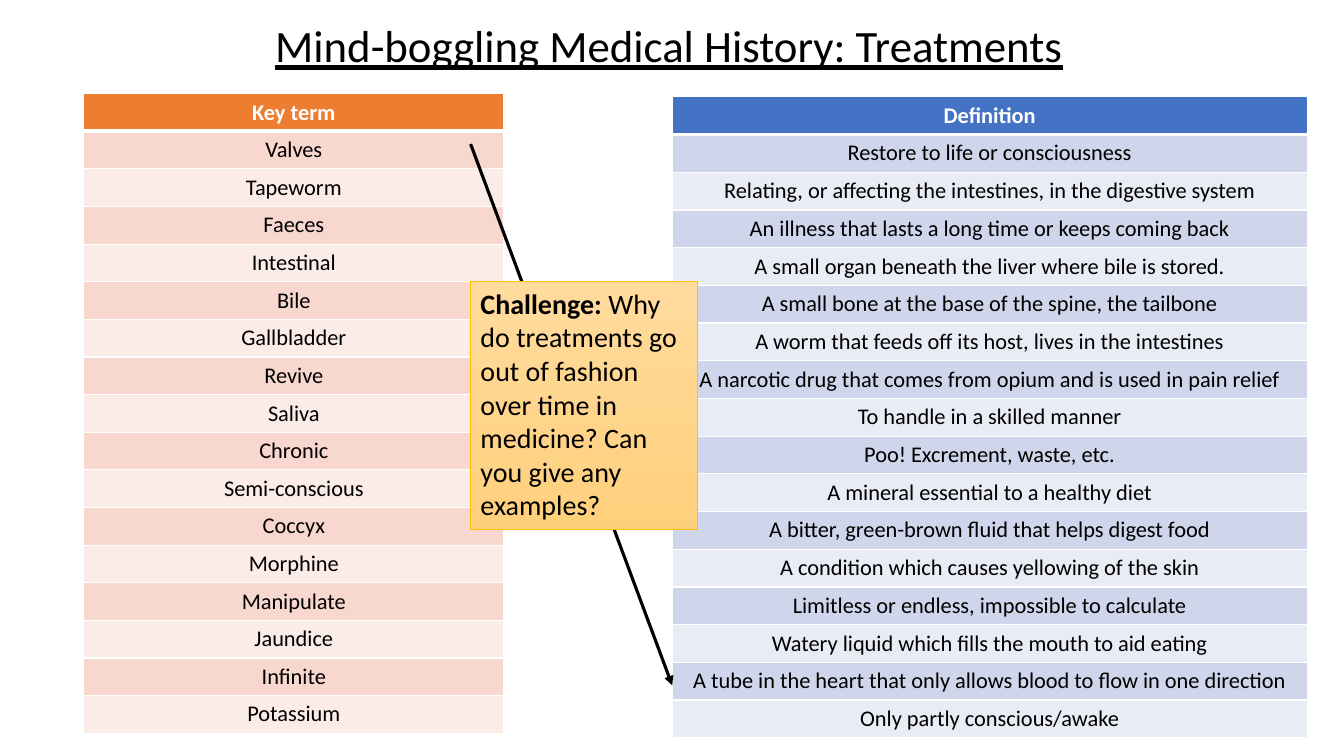
from lxml import etree
from pptx import Presentation
from pptx.dml.color import RGBColor
from pptx.enum.shapes import MSO_CONNECTOR as Connector, MSO_SHAPE as Shape
from pptx.enum.text import MSO_ANCHOR as Anchor, MSO_AUTO_SIZE as AutoSize, PP_ALIGN as Align
from pptx.oxml.ns import qn
from pptx.util import Cm, Pt

COLOURS = {
    "text": "000000", "white": "FFFFFF",
    "term_head": "ED7D31", "term_dark": "F8D7CE", "term_light": "FCECE8",
    "definition_head": "4472C4", "definition_dark": "CFD5EA", "definition_light": "E9EBF5",
    "challenge_top": "FFDB9E", "challenge_bottom": "FFD07C", "challenge_edge": "FFC000",
}
TERMS = [
    "Key term", "Valves", "Tapeworm", "Faeces", "Intestinal", "Bile", "Gallbladder",
    "Revive", "Saliva", "Chronic", "Semi-conscious", "Coccyx", "Morphine",
    "Manipulate", "Jaundice", "Infinite", "Potassium",
]
DEFINITIONS = [
    "Definition",
    "Restore to life or consciousness",
    "Relating, or affecting the intestines, in the digestive system",
    "An illness that lasts a long time or keeps coming back",
    "A small organ beneath the liver where bile is stored.",
    "A small bone at the base of the spine, the tailbone",
    "A worm that feeds off its host, lives in the intestines",
    "A narcotic drug that comes from opium and is used in pain relief",
    "To handle in a skilled manner",
    "Poo! Excrement, waste, etc.",
    "A mineral essential to a healthy diet",
    "A bitter, green-brown fluid that helps digest food",
    "A condition which causes yellowing of the skin",
    "Limitless or endless, impossible to calculate",
    "Watery liquid which fills the mouth to aid eating",
    "A tube in the heart that only allows blood to flow in one direction",
    "Only partly conscious/awake",
]


def colour(name):
    """Return the named colour."""
    return RGBColor.from_string(COLOURS[name])


def set_font(paragraph, size, name="text"):
    """Set the typeface, size and colour of a paragraph."""
    paragraph.font.name = "Calibri"
    paragraph.font.size = Pt(size)
    paragraph.font.color.rgb = colour(name)


def add_title(slide, box):
    """Place the underlined heading in the title placeholder."""
    title = slide.shapes.title
    title.left, title.top, title.width, title.height = map(Cm, box)
    title.text_frame.text = "Mind-boggling Medical History: Treatments"
    title.text_frame.vertical_anchor = Anchor.MIDDLE
    heading = title.text_frame.paragraphs[0]
    heading.alignment = Align.LEFT
    heading.line_spacing = 0.9
    set_font(heading, 32)
    heading.font.underline = True


def add_borders(cell, row):
    """Draw white cell borders, thicker below the header."""
    widths = {"L": 1, "R": 1, "T": 3 if row == 1 else 1, "B": 3 if row == 0 else 1}
    properties = cell._tc.get_or_add_tcPr()
    for side, width in widths.items():
        border = etree.SubElement(properties, qn(f"a:ln{side}"), w=str(Pt(width)))
        fill = etree.SubElement(border, qn("a:solidFill"))
        etree.SubElement(fill, qn("a:srgbClr"), val=COLOURS["white"])


def add_word_list(slide, box, entries, theme):
    """Fill a banded one-column table with a header and its entries."""
    left, top, width, height = box
    table = slide.shapes.add_table(len(entries), 1, *map(Cm, box)).table
    table.columns[0].width = Cm(width)
    for row, entry in enumerate(entries):
        table.rows[row].height = Cm(height / len(entries))
        cell = table.cell(row, 0)
        add_borders(cell, row)
        band = "head" if row == 0 else "dark" if row % 2 else "light"
        cell.fill.solid()
        cell.fill.fore_color.rgb = colour(f"{theme}_{band}")
        cell.text = entry
        label = cell.text_frame.paragraphs[0]
        label.alignment = Align.CENTER
        set_font(label, 16, "text" if row else "white")
        label.font.bold = row == 0


def add_match_arrow(slide, start, end):
    """Point from a key term to its definition."""
    arrow = slide.shapes.add_connector(Connector.STRAIGHT, *map(Cm, start + end))
    arrow.line.color.rgb = colour("text")
    arrow.line.width = Pt(2.25)
    etree.SubElement(arrow.line._get_or_add_ln(), qn("a:tailEnd"), type="triangle")
    etree.SubElement(arrow._element.spPr, qn("a:effectLst"))


def add_challenge(slide, box):
    """Place the shaded challenge question."""
    challenge = slide.shapes.add_shape(Shape.RECTANGLE, *map(Cm, box))
    challenge.shadow.inherit = False
    challenge.fill.gradient()
    challenge.fill.gradient_angle = 270
    for stop, name in zip(challenge.fill.gradient_stops, ("challenge_top", "challenge_bottom")):
        stop.color.rgb = colour(name)
    for stop, position in zip(challenge.fill.gradient_stops, (0, 1)):
        stop.position = position
    challenge.line.color.rgb = colour("challenge_edge")
    challenge.line.width = Pt(0.5)
    frame = challenge.text_frame
    frame.word_wrap = True
    frame.auto_size = AutoSize.SHAPE_TO_FIT_TEXT
    frame.vertical_anchor = Anchor.TOP
    question = frame.paragraphs[0]
    question.alignment = Align.LEFT
    set_font(question, 20)
    lead = question.add_run()
    lead.text = "Challenge: "
    lead.font.bold = True
    question.add_run().text = (
        "Why do treatments go out of fashion over time in medicine? Can you give any examples?"
    )


def main():
    """Build the key term matching slide."""
    deck = Presentation()
    deck.slide_width, deck.slide_height = Cm(33.87), Cm(19.05)
    slide = deck.slides.add_slide(deck.slide_layouts[5])
    add_title(slide, (6.68, 0.38, 21.16, 1.68))
    add_word_list(slide, (2.11, 2.36, 10.59, 16.13), TERMS, "term")
    add_word_list(slide, (16.94, 2.44, 16, 16.15), DEFINITIONS, "definition")
    add_match_arrow(slide, (11.86, 3.63), (16.94, 17.27))
    add_challenge(slide, (11.86, 7.09, 5.72, 6.25))
    deck.save("out.pptx")


if __name__ == "__main__":
    main()
